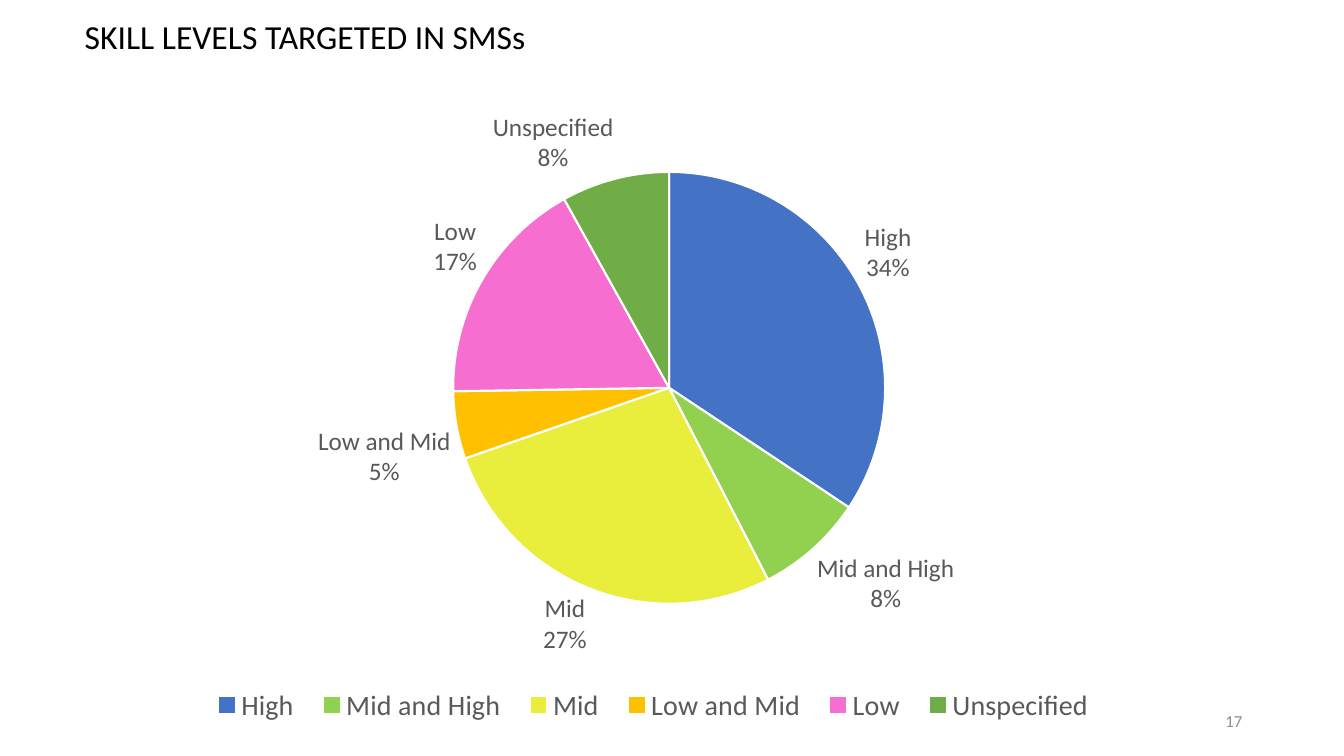
from lxml import etree
from pptx import Presentation
from pptx.chart.data import CategoryChartData
from pptx.dml.color import RGBColor
from pptx.enum.chart import XL_CHART_TYPE as ChartType
from pptx.enum.chart import XL_LABEL_POSITION as LabelPosition
from pptx.enum.chart import XL_LEGEND_POSITION as LegendPosition
from pptx.enum.text import MSO_ANCHOR as Anchor
from pptx.enum.text import MSO_AUTO_SIZE as AutoSize
from pptx.enum.text import PP_ALIGN as Align
from pptx.oxml.ns import qn
from pptx.util import Inches, Pt

WIDTH, HEIGHT = Inches(13.33), Inches(7.5)
FONT = "Calibri"
COLORS = {
    "title": "000000",
    "label": "595959",
    "number": "8C8C8C",
    "border": "FFFFFF",
}
# Skill level: (percentage, slice colour)
SKILL_LEVELS = {
    "High": (34, "4472C4"),
    "Mid and High": (8, "92D050"),
    "Mid": (27, "E9ED3B"),
    "Low and Mid": (5, "FFC000"),
    "Low": (17, "F66ECF"),
    "Unspecified": (8, "70AD47"),
}
# Boxes as left, top, width, height in inches
TITLE_BOX = (0.74, 0.15, 12.37, 0.46)
CHART_BOX = (1.23, 0.95, 10.5, 6.3)
NUMBER_BOX = (9.42, 6.95, 3, 0.4)
# Areas as shares of the chart
PIE_AREA = {"x": 0.31, "y": 0.12, "w": 0.41, "h": 0.68}
LEGEND_AREA = {"x": 0.07, "y": 0.92, "w": 0.86, "h": 0.08}


def format_font(font, size, color):
    font.name = FONT
    font.size = Pt(size)
    font.color.rgb = RGBColor.from_string(COLORS[color])


def write_text(shape, text, size, color, align=Align.LEFT, line_spacing=1.0):
    frame = shape.text_frame
    frame.word_wrap = True
    frame.auto_size = AutoSize.NONE
    frame.vertical_anchor = Anchor.MIDDLE
    paragraph = frame.paragraphs[0]
    paragraph.alignment = align
    paragraph.line_spacing = line_spacing
    run = paragraph.add_run()
    run.text = text
    format_font(run.font, size, color)


def place_title(slide, box):
    title = slide.shapes.title
    title.left, title.top, title.width, title.height = map(Inches, box)
    write_text(title, "SKILL LEVELS TARGETED IN SMSs", size=24, color="title",
               line_spacing=0.9)


def place_number(slide, box):
    shape = slide.shapes.add_textbox(*map(Inches, box))
    write_text(shape, "17", size=12, color="number", align=Align.RIGHT)


def set_area(parent, position, area, **target):
    """Give a chart part a fixed area; position is the layout's place in it."""
    layout = parent.find(qn("c:layout"))
    if layout is None:
        layout = etree.Element(qn("c:layout"))
        parent.insert(position, layout)
    manual = etree.SubElement(layout, qn("c:manualLayout"))
    settings = {**target, "xMode": "edge", "yMode": "edge", **area}
    for name, value in settings.items():
        etree.SubElement(manual, qn(f"c:{name}")).set("val", str(value))


def place_pie(slide, box):
    data = CategoryChartData()
    data.categories = list(SKILL_LEVELS)
    data.add_series("Series 1", [value for value, _ in SKILL_LEVELS.values()])
    frame = slide.shapes.add_chart(ChartType.PIE, *map(Inches, box), data)
    chart = frame.chart
    chart.has_title = False
    format_font(chart.font, 10, "title")
    plot = chart.plots[0]
    set_area(plot._element.getparent(), 0, PIE_AREA, layoutTarget="inner")

    # Legend
    chart.has_legend = True
    legend = chart.legend
    legend.position = LegendPosition.BOTTOM
    legend.include_in_layout = False
    format_font(legend.font, 20, "label")
    set_area(legend._element, 1, LEGEND_AREA)

    # Slices
    plot.vary_by_categories = True
    for index, (_, color) in enumerate(SKILL_LEVELS.values()):
        slice_format = plot.series[0].points[index].format
        slice_format.fill.solid()
        slice_format.fill.fore_color.rgb = RGBColor.from_string(color)
        slice_format.line.color.rgb = RGBColor.from_string(COLORS["border"])
        slice_format.line.width = Pt(1.5)

    # Labels
    labels = plot.series[0].data_labels
    labels.show_category_name = True
    labels.show_percentage = True
    labels.show_value = False
    labels.position = LabelPosition.OUTSIDE_END
    format_font(labels.font, 18, "label")


def main():
    presentation = Presentation()
    presentation.slide_width, presentation.slide_height = WIDTH, HEIGHT
    slide = presentation.slides.add_slide(presentation.slide_layouts[5])
    place_number(slide, NUMBER_BOX)
    place_title(slide, TITLE_BOX)
    place_pie(slide, CHART_BOX)
    presentation.save("out.pptx")


if __name__ == "__main__":
    main()
